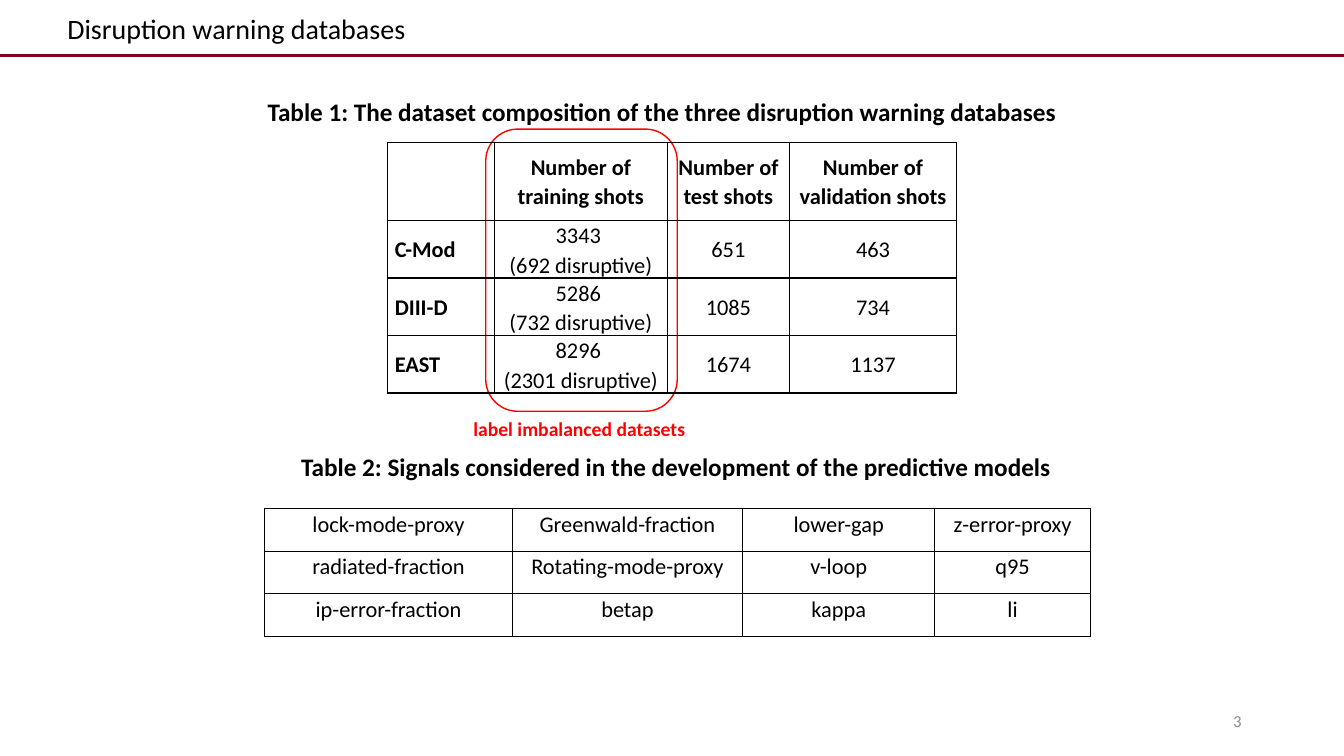
from pptx import Presentation
from pptx.dml.color import RGBColor
from pptx.enum.shapes import MSO_CONNECTOR, MSO_SHAPE
from pptx.enum.text import MSO_ANCHOR, PP_ALIGN
from pptx.oxml.ns import qn
from pptx.util import Pt
from lxml import etree

ROUNDED = MSO_SHAPE.ROUNDED_RECTANGLE
STRAIGHT = MSO_CONNECTOR.STRAIGHT
TOP, MIDDLE = MSO_ANCHOR.TOP, MSO_ANCHOR.MIDDLE
LEFT, CENTER, RIGHT, JUSTIFY = (
    PP_ALIGN.LEFT, PP_ALIGN.CENTER, PP_ALIGN.RIGHT, PP_ALIGN.JUSTIFY)

FONT = "Calibri"
BLACK = RGBColor(0x00, 0x00, 0x00)
WHITE = RGBColor(0xFF, 0xFF, 0xFF)
RED = RGBColor(0xFF, 0x00, 0x00)
MAROON = RGBColor(0x7E, 0x00, 0x18)
GRAY = RGBColor(0x8C, 0x8C, 0x8C)

DATASETS = [
    ["", "Number of training shots", "Number of test shots",
     "Number of validation shots"],
    ["C-Mod", "3343 \n(692 disruptive)", "651", "463"],
    ["DIII-D", "5286 \n(732 disruptive)", "1085", "734"],
    ["EAST", "8296 \n(2301 disruptive)", "1674", "1137"],
]
SIGNALS = [
    ["lock-mode-proxy", "Greenwald-fraction", "lower-gap", "z-error-proxy"],
    ["radiated-fraction", "Rotating-mode-proxy", "v-loop", "q95"],
    ["ip-error-fraction", "betap", "kappa", "li"],
]


def style_text(para, size, color=BLACK, bold=False, align=LEFT):
    para.alignment = align
    font = para.font
    font.name, font.size, font.bold = FONT, Pt(size), bold
    font.color.rgb = color


def add_text(page, text, left, top, width, height, size, color=BLACK,
             bold=False, align=LEFT, anchor=TOP):
    box = page.shapes.add_textbox(Pt(left), Pt(top), Pt(width), Pt(height))
    frame = box.text_frame
    frame.word_wrap = True
    frame.vertical_anchor = anchor
    frame.text = text
    style_text(frame.paragraphs[0], size, color, bold, align)
    return box


def add_rule(page, top, width):
    rule = page.shapes.add_connector(STRAIGHT, 0, Pt(top), Pt(width), Pt(top))
    rule.line.color.rgb = MAROON
    rule.line.width = Pt(2.25)
    etree.SubElement(rule.element.spPr, qn("a:effectLst"))


def add_highlight(page, left, top, width, height):
    frame = page.shapes.add_shape(
        ROUNDED, Pt(left), Pt(top), Pt(width), Pt(height))
    frame.shadow.inherit = False
    frame.fill.solid()
    frame.fill.fore_color.rgb = WHITE
    frame.line.color.rgb = RED
    frame.line.width = Pt(1)


def set_borders(cell):
    properties = cell._tc.get_or_add_tcPr()
    for position, side in enumerate(("lnL", "lnR", "lnT", "lnB")):
        border = etree.Element(qn(f"a:{side}"), w=str(Pt(1)))
        fill = etree.SubElement(border, qn("a:solidFill"))
        etree.SubElement(fill, qn("a:srgbClr"), val=str(BLACK))
        properties.insert(position, border)


def add_grid(page, rows, left, top, widths, heights, anchor, headed=False):
    """Bordered table; headed makes the first row and column bold."""
    table = page.shapes.add_table(
        len(rows), len(widths), Pt(left), Pt(top),
        Pt(sum(widths)), Pt(sum(heights))).table
    table.first_row = table.horz_banding = False
    for column, width in zip(table.columns, widths):
        column.width = Pt(width)
    for r, (row, height) in enumerate(zip(rows, heights)):
        table.rows[r].height = Pt(height)
        for c, text in enumerate(row):
            cell = table.cell(r, c)
            cell.fill.background()
            set_borders(cell)
            cell.margin_left = cell.margin_right = Pt(5.4)
            cell.margin_top = cell.margin_bottom = 0
            cell.vertical_anchor = anchor
            para = cell.text_frame.paragraphs[0]
            para.text = text
            para.line_spacing = 1.07
            para.space_after = Pt(6)
            style_text(para, 16, bold=headed and (r == 0 or c == 0),
                       align=JUSTIFY if headed and c == 0 else CENTER)


def main():
    deck = Presentation()
    deck.slide_width, deck.slide_height = Pt(960), Pt(540)
    page = deck.slides.add_slide(deck.slide_layouts[6])

    # Highlight behind the training column
    add_highlight(page, 347, 92.2, 136.8, 201.6)

    # Header and page number
    add_rule(page, 39.6, 960)
    title = add_text(page, "Disruption warning databases",
                     41, 5, 830, 31.6, 20)
    title.line.color.rgb = WHITE
    title.line.width = Pt(0.75)
    add_text(page, "3", 678, 500.5, 216, 28.8, 12, GRAY,
             align=RIGHT, anchor=MIDDLE)

    # Dataset table
    add_text(page, "Table 1: The dataset composition of the three "
             "disruption warning databases", 184, 65.5, 591, 29, 18, bold=True)
    add_grid(page, DATASETS, 276.6, 101.5, [76.4, 123.8, 87, 119.6],
             [56] + [37] * 3, MIDDLE, headed=True)
    add_text(page, "label imbalanced datasets", 331, 294.5, 168.5, 24.5, 14,
             RED, bold=True)

    # Signal table
    add_text(page, "Table 2: Signals considered in the development of the "
             "predictive models", 208, 318.5, 552, 29, 18, bold=True)
    add_grid(page, SIGNALS, 189, 363.4, [177, 164.4, 137.4, 111],
             [30.4] * 3, TOP)

    deck.save("out.pptx")


if __name__ == "__main__":
    main()
